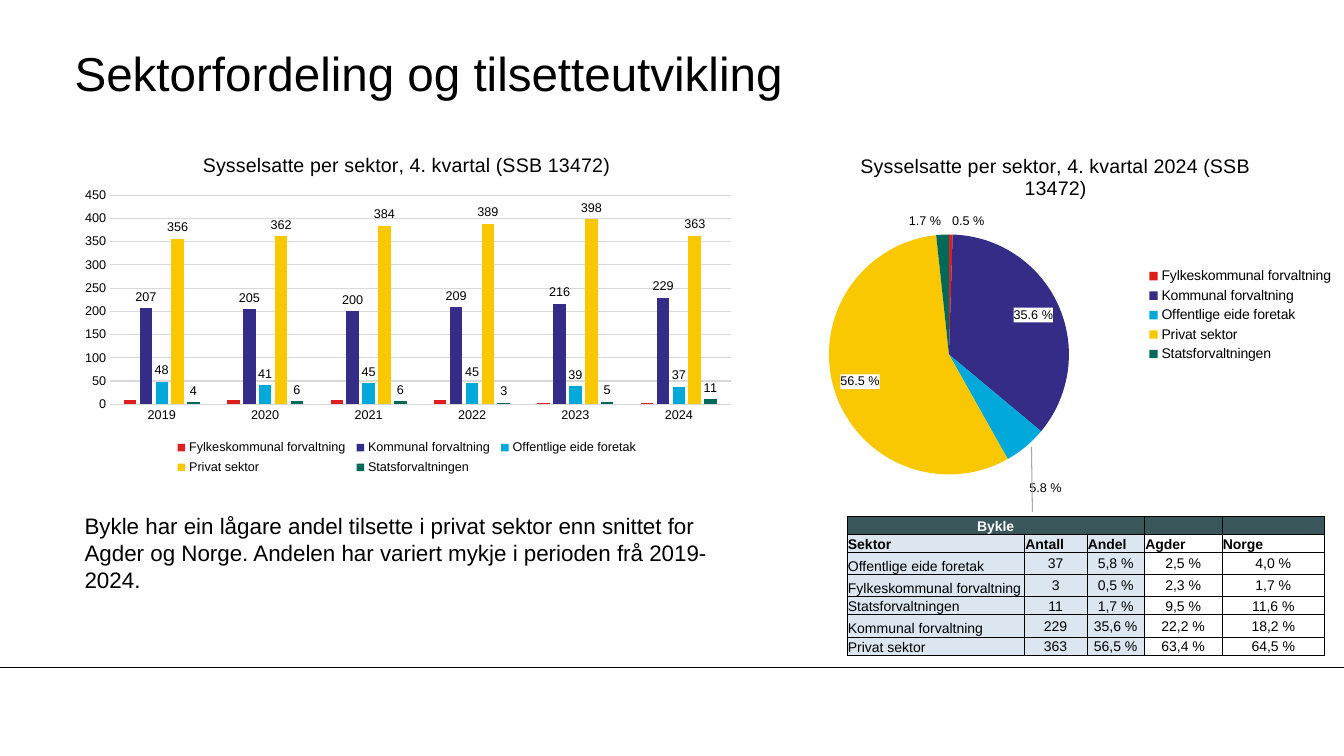
"""Build a slide on employment by sector in Bykle with two charts and a table."""
import lxml.etree
import pptx
import pptx.chart.data
import pptx.dml.color
import pptx.enum.chart
import pptx.enum.shapes
import pptx.enum.text
import pptx.oxml
import pptx.oxml.ns
import pptx.util

Inches = pptx.util.Inches
Pt = pptx.util.Pt
qn = pptx.oxml.ns.qn
RGB = pptx.dml.color.RGBColor.from_string
LabelPosition = pptx.enum.chart.XL_LABEL_POSITION
Align = pptx.enum.text.PP_ALIGN
Anchor = pptx.enum.text.MSO_ANCHOR

THEME = {
    "font": "Arial", "text": "000000", "white": "FFFFFF", "grid": "D9D9D9",
    "leader": "A6A6A6", "header": "39575B", "tint": "DCE6F1",
    "sectors": ["DF1F1D", "342C86", "00A9DA", "FAC800", "00695A"],
    "title": 34, "body": 16, "chart_title": 14, "table": 10, "legend": 10, "small": 9,
}


def style_font(font, size, color=THEME["text"], bold=False):
    font.name = THEME["font"]
    font.size = Pt(size)
    font.bold = bold
    font.color.rgb = RGB(color)


def set_layout(element, index, **edges):
    for old_layout in element.findall(qn("c:layout")):
        element.remove(old_layout)
    layout = lxml.etree.Element(qn("c:layout"))
    manual = lxml.etree.SubElement(layout, qn("c:manualLayout"))
    for name, value in edges.items():
        lxml.etree.SubElement(manual, qn(f"c:{name}")).set("val", str(value))
    element.insert(index, layout)


presentation = pptx.Presentation()
presentation.slide_width = Inches(13.33)
presentation.slide_height = Inches(7.5)
slide = presentation.slides.add_slide(presentation.slide_layouts[5])

title = slide.shapes.title
title.left, title.top, title.width, title.height = map(Inches, (0.74, 0.34, 11.1, 0.75))
title_frame = title.text_frame
title_frame.margin_left = title_frame.margin_right = 0
title_frame.margin_top = title_frame.margin_bottom = 0
title_frame.vertical_anchor = Anchor.MIDDLE
title_frame.paragraphs[0].alignment = Align.LEFT
title_run = title_frame.paragraphs[0].add_run()
title_run.text = "Sektorfordeling og tilsetteutvikling"
style_font(title_run.font, THEME["title"])

comment_frame = slide.shapes.add_textbox(*map(Inches, (0.74, 5.03, 6.41, 0.91))).text_frame
comment_frame.word_wrap = True
comment_run = comment_frame.paragraphs[0].add_run()
comment_run.text = ("Bykle har ein lågare andel tilsette i privat sektor enn snittet for "
                    "Agder og Norge. Andelen har variert mykje i perioden frå 2019-2024.")
style_font(comment_run.font, THEME["body"])

table_rows = [
    ["Bykle", "", "", "", ""],
    ["Sektor", "Antall", "Andel", "Agder", "Norge"],
    ["Offentlige eide foretak", "37", "5,8 %", "2,5 %", "4,0 %"],
    ["Fylkeskommunal forvaltning", "3", "0,5 %", "2,3 %", "1,7 %"],
    ["Statsforvaltningen", "11", "1,7 %", "9,5 %", "11,6 %"],
    ["Kommunal forvaltning", "229", "35,6 %", "22,2 %", "18,2 %"],
    ["Privat sektor", "363", "56,5 %", "63,4 %", "64,5 %"],
]
table = slide.shapes.add_table(7, 5, *map(Inches, (8.4, 5.12, 4.74, 1.38))).table
table.first_row = table.horz_banding = False
for column, width in zip(table.columns, (1.76, 0.62, 0.57, 0.77, 1.02)):
    column.width = Inches(width)
for row, height in zip(table.rows, (0.18, 0.18, 0.22, 0.22, 0.18, 0.22, 0.18)):
    row.height = Inches(height)
table.cell(0, 0).merge(table.cell(0, 2))
for row_index, texts in enumerate(table_rows):
    for column_index, text in enumerate(texts):
        cell = table.cell(row_index, column_index)
        cell.margin_left = cell.margin_right = cell.margin_top = Inches(0.01)
        cell.margin_bottom = 0
        is_figure = row_index > 1 and column_index > 0
        cell.vertical_anchor = Anchor.MIDDLE if is_figure else Anchor.BOTTOM
        paragraph = cell.text_frame.paragraphs[0]
        paragraph.alignment = Align.CENTER if is_figure or row_index == 0 else Align.LEFT
        if text:
            run = paragraph.add_run()
            run.text = text
            style_font(run.font, THEME["table"],
                       THEME["white" if row_index == 0 else "text"], row_index < 2)
        else:
            end = lxml.etree.SubElement(paragraph._p, qn("a:endParaRPr"))
            end.set("sz", str(THEME["table"] * 100))
        properties = cell._tc.get_or_add_tcPr()
        for side in ("lnL", "lnR", "lnT", "lnB"):
            border = lxml.etree.SubElement(properties, qn(f"a:{side}"), w=str(Pt(0.5)))
            border_fill = lxml.etree.SubElement(border, qn("a:solidFill"))
            lxml.etree.SubElement(border_fill, qn("a:srgbClr"), val=THEME["text"])
        if row_index == 0 or column_index < 3:
            cell.fill.solid()
            cell.fill.fore_color.rgb = RGB(THEME["header" if row_index == 0 else "tint"])
        else:
            cell.fill.background()

sectors = ["Fylkeskommunal forvaltning", "Kommunal forvaltning", "Offentlige eide foretak",
           "Privat sektor", "Statsforvaltningen"]
employees = [(10, 10, 10, 10, 3, 3), (207, 205, 200, 209, 216, 229), (48, 41, 45, 45, 39, 37),
             (356, 362, 384, 389, 398, 363), (4, 6, 6, 3, 5, 11)]
column_data = pptx.chart.data.CategoryChartData(number_format="#,##0")
column_data.categories = ["2019", "2020", "2021", "2022", "2023", "2024"]
for sector, values in zip(sectors, employees):
    column_data.add_series(sector, values)
pie_data = pptx.chart.data.CategoryChartData(number_format="0.0")
pie_data.categories = sectors
pie_data.add_series("Series 1", (0.5, 35.6, 5.8, 56.5, 1.7))

ChartType = pptx.enum.chart.XL_CHART_TYPE
LegendPosition = pptx.enum.chart.XL_LEGEND_POSITION
charts = []
for kind, data, box, heading, legend_position, legend_size, plot_box, legend_box in (
    (ChartType.COLUMN_CLUSTERED, column_data, (0.69, 1.36, 6.69, 3.4),
     "Sysselsatte per sektor, 4. kvartal (SSB 13472)", LegendPosition.BOTTOM, THEME["small"],
     (0.06, 0.17, 0.92, 0.61), (0.15, 0.87, 0.7, 0.13)),
    (ChartType.PIE, pie_data, (7.61, 1.36, 5.72, 3.72),
     "Sysselsatte per sektor, 4. kvartal 2024 (SSB 13472)", LegendPosition.RIGHT, THEME["legend"],
     (0.09, 0.26, 0.45, 0.64), (0.65, 0.34, 0.34, 0.27)),
):
    chart = slide.shapes.add_chart(kind, *map(Inches, box), data).chart
    style_font(chart.font, THEME["legend"])
    heading_run = chart.chart_title.text_frame.paragraphs[0].add_run()
    heading_run.text = heading
    style_font(heading_run.font, THEME["chart_title"])
    chart.has_legend = True
    chart.legend.position = legend_position
    chart.legend.include_in_layout = False
    style_font(chart.legend.font, legend_size)
    for element, index, (x, y, w, h) in (
        (chart._chartSpace.chart.plotArea, 0, plot_box), (chart.legend._element, 1, legend_box),
    ):
        target = {"layoutTarget": "inner"} if index == 0 else {}
        set_layout(element, index, **target, xMode="edge", yMode="edge", x=x, y=y, w=w, h=h)
    charts.append(chart)
column_chart, pie_chart = charts

column_plot = column_chart.plots[0]
column_plot.gap_width = 219
column_plot.overlap = -27
column_plot.vary_by_categories = False
for axis in (column_chart.category_axis, column_chart.value_axis):
    axis.major_tick_mark = axis.minor_tick_mark = pptx.enum.chart.XL_TICK_MARK.NONE
    style_font(axis.tick_labels.font, THEME["small"])
column_chart.category_axis.format.line.color.rgb = RGB(THEME["grid"])
column_chart.value_axis.format.line.fill.background()
gridline = column_chart.value_axis.major_gridlines.format.line
gridline.color.rgb = RGB(THEME["grid"])
gridline.width = Pt(0.75)
for series, color in zip(column_plot.series, THEME["sectors"]):
    series.format.fill.solid()
    series.format.fill.fore_color.rgb = RGB(color)
    if series.name != sectors[0]:
        series.data_labels.show_value = True
        series.data_labels.position = LabelPosition.OUTSIDE_END
        style_font(series.data_labels.font, THEME["small"])

pie_series = pie_chart.plots[0].series[0]
pie_labels = pie_series.data_labels
pie_labels.show_value = True
style_font(pie_labels.font, THEME["small"])
label_list = pie_labels._element
for leader_setting in label_list.findall(qn("c:showLeaderLines")):
    label_list.remove(leader_setting)
lxml.etree.SubElement(label_list, qn("c:showLeaderLines"), val="0")
label_offsets = {0: (0.03, 0), 2: (0, 0.08), 4: (-0.03, 0)}
for index, color in enumerate(THEME["sectors"]):
    point = pie_series.points[index]
    point.format.fill.solid()
    point.format.fill.fore_color.rgb = RGB(color)
    label = point.data_label
    style_font(label.font, THEME["small"])
    label.position = (LabelPosition.OUTSIDE_END if index in label_offsets
                      else LabelPosition.INSIDE_END)
    label_element = label._get_or_add_dLbl()
    for old_format in label_element.findall(qn("c:spPr")):
        label_element.remove(old_format)
    box_format = lxml.etree.Element(qn("c:spPr"))
    box_fill = lxml.etree.SubElement(box_format, qn("a:solidFill"))
    lxml.etree.SubElement(box_fill, qn("a:srgbClr"), val=THEME["white"])
    label_element.insert(1, box_format)
    label_element.insert(1, lxml.etree.Element(
        qn("c:numFmt"), formatCode='0.0" %"', sourceLinked="0"))
    if index in label_offsets:
        offset_x, offset_y = label_offsets[index]
        set_layout(label_element, 1, x=offset_x, y=offset_y)

for start_x, start_y, end_x, end_y, color in (
    (10.23, 4.43, 10.24, 5.08, "leader"), (0, 6.62, 13.33, 6.62, "text"),
):
    line = slide.shapes.add_connector(pptx.enum.shapes.MSO_CONNECTOR.STRAIGHT,
                                      *map(Inches, (start_x, start_y, end_x, end_y)))
    line.line.color.rgb = RGB(THEME[color])
    line.line.width = Pt(0.75)
    lxml.etree.SubElement(line._element.spPr, qn("a:effectLst"))

presentation.save("out.pptx")
